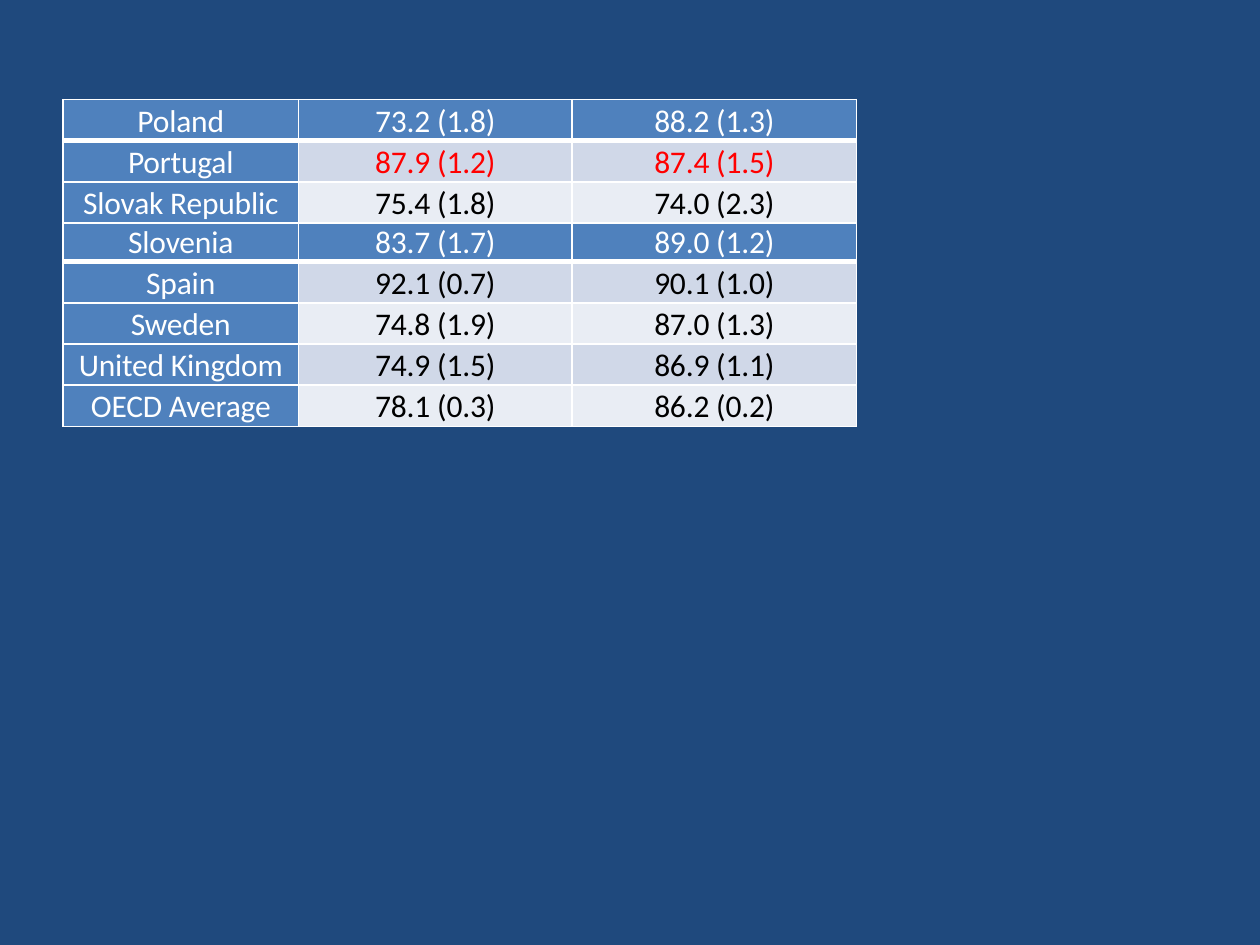
import pptx
import pptx.dml.color
import pptx.enum.text
import pptx.oxml
import pptx.oxml.ns
import pptx.util

Inches = pptx.util.Inches
Pt = pptx.util.Pt
RGBColor = pptx.dml.color.RGBColor

NAVY = RGBColor(0x1F, 0x49, 0x7D)
BLUE = RGBColor(0x4F, 0x81, 0xBD)
BAND_DARK = RGBColor(0xD0, 0xD8, 0xE8)
BAND_LIGHT = RGBColor(0xE9, 0xED, 0xF4)
WHITE = RGBColor(0xFF, 0xFF, 0xFF)
BLACK = RGBColor(0, 0, 0)
RED = RGBColor(0xFF, 0, 0)

COL_WIDTHS = (1.87, 2.17, 2.26)
ROW_HEIGHT = 0.32
LEFT, TOP = 0.5, 0.79
HIGHLIGHTED = "Portugal"

FIRST_ROWS = [
    ("Poland", "73.2 (1.8)", "88.2 (1.3)"),
    ("Portugal", "87.9 (1.2)", "87.4 (1.5)"),
    ("Slovak Republic", "75.4 (1.8)", "74.0 (2.3)"),
]
LAST_ROWS = [
    ("Slovenia", "83.7 (1.7)", "89.0 (1.2)"),
    ("Spain", "92.1 (0.7)", "90.1 (1.0)"),
    ("Sweden", "74.8 (1.9)", "87.0 (1.3)"),
    ("United Kingdom", "74.9 (1.5)", "86.9 (1.1)"),
    ("OECD Average", "78.1 (0.3)", "86.2 (0.2)"),
]


def set_borders(cell, bottom):
    """Give a cell white borders, one point wide except at the bottom."""
    tc_pr = cell._tc.get_or_add_tcPr()
    for i, (side, width) in enumerate((("L", 1), ("R", 1), ("T", 1), ("B", bottom))):
        ln = pptx.oxml.parse_xml(
            f'<a:ln{side} {pptx.oxml.ns.nsdecls("a")} w="{Pt(width)}">'
            f'<a:solidFill><a:srgbClr val="{WHITE}"/></a:solidFill></a:ln{side}>'
        )
        tc_pr.insert(i, ln)


def format_cell(cell, text, fill, color, bottom):
    """Write centred text in a filled and bordered cell."""
    cell.margin_left = cell.margin_right = Inches(0.07)
    cell.margin_top = cell.margin_bottom = 0
    cell.fill.solid()
    cell.fill.fore_color.rgb = fill
    set_borders(cell, bottom)
    cell.text_frame.text = text
    p = cell.text_frame.paragraphs[0]
    p.alignment = pptx.enum.text.PP_ALIGN.CENTER
    p.line_spacing = 1.07
    r = p.runs[0]
    r.font.name = "Calibri"
    r.font.size = Pt(18)
    r.font.bold = False
    r.font.color.rgb = color
    r._r.get_or_add_rPr().set("spc", "-10")


def add_country_table(s, rows, left, top, width, height):
    """Add a country table with a blue first row and first column."""
    table = s.shapes.add_table(
        len(rows), len(COL_WIDTHS), Inches(left), Inches(top), Inches(width), Inches(height)
    ).table
    for column, share in zip(table.columns, COL_WIDTHS):
        column.width = Inches(width * share / sum(COL_WIDTHS))
    for i, values in enumerate(rows):
        table.rows[i].height = Inches(height / len(rows))
        for j, text in enumerate(values):
            if i == 0 or j == 0:
                fill, color = BLUE, WHITE
            else:
                fill = BAND_DARK if i % 2 else BAND_LIGHT
                color = RED if values[0] == HIGHLIGHTED else BLACK
            format_cell(table.cell(i, j), text, fill, color, 3 if i == 0 else 1)


def main():
    """Build the slide with its two stacked tables."""
    prs = pptx.Presentation()
    prs.slide_width = Inches(10)
    prs.slide_height = Inches(7.5)
    s = prs.slides.add_slide(prs.slide_layouts[6])
    s.background.fill.solid()
    s.background.fill.fore_color.rgb = NAVY
    width = sum(COL_WIDTHS)
    first_height = ROW_HEIGHT * len(FIRST_ROWS)
    last_height = ROW_HEIGHT * len(LAST_ROWS)
    add_country_table(s, LAST_ROWS, LEFT, TOP + first_height, width, last_height)
    add_country_table(s, FIRST_ROWS, LEFT, TOP, width, first_height)
    prs.save("out.pptx")


if __name__ == "__main__":
    main()
